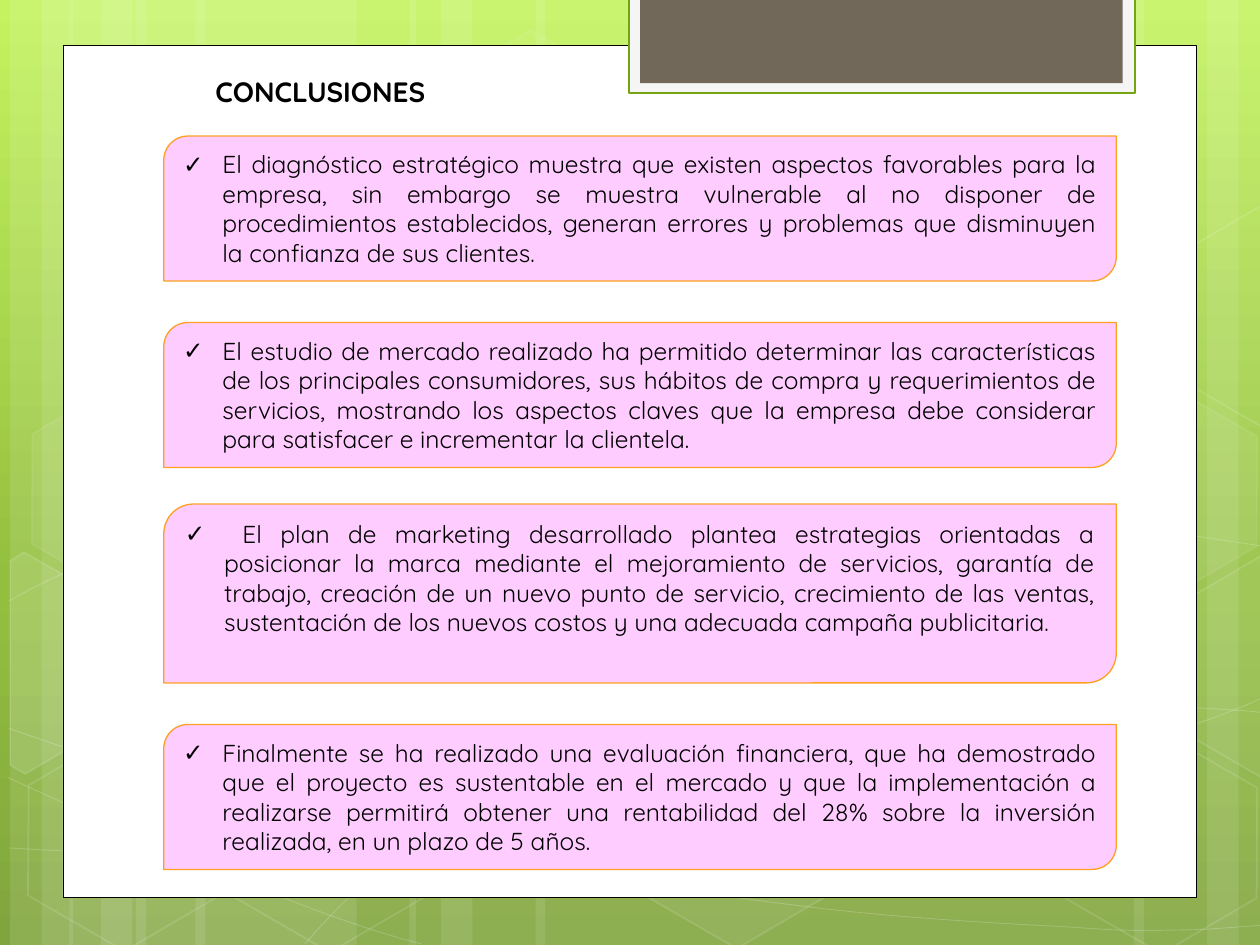
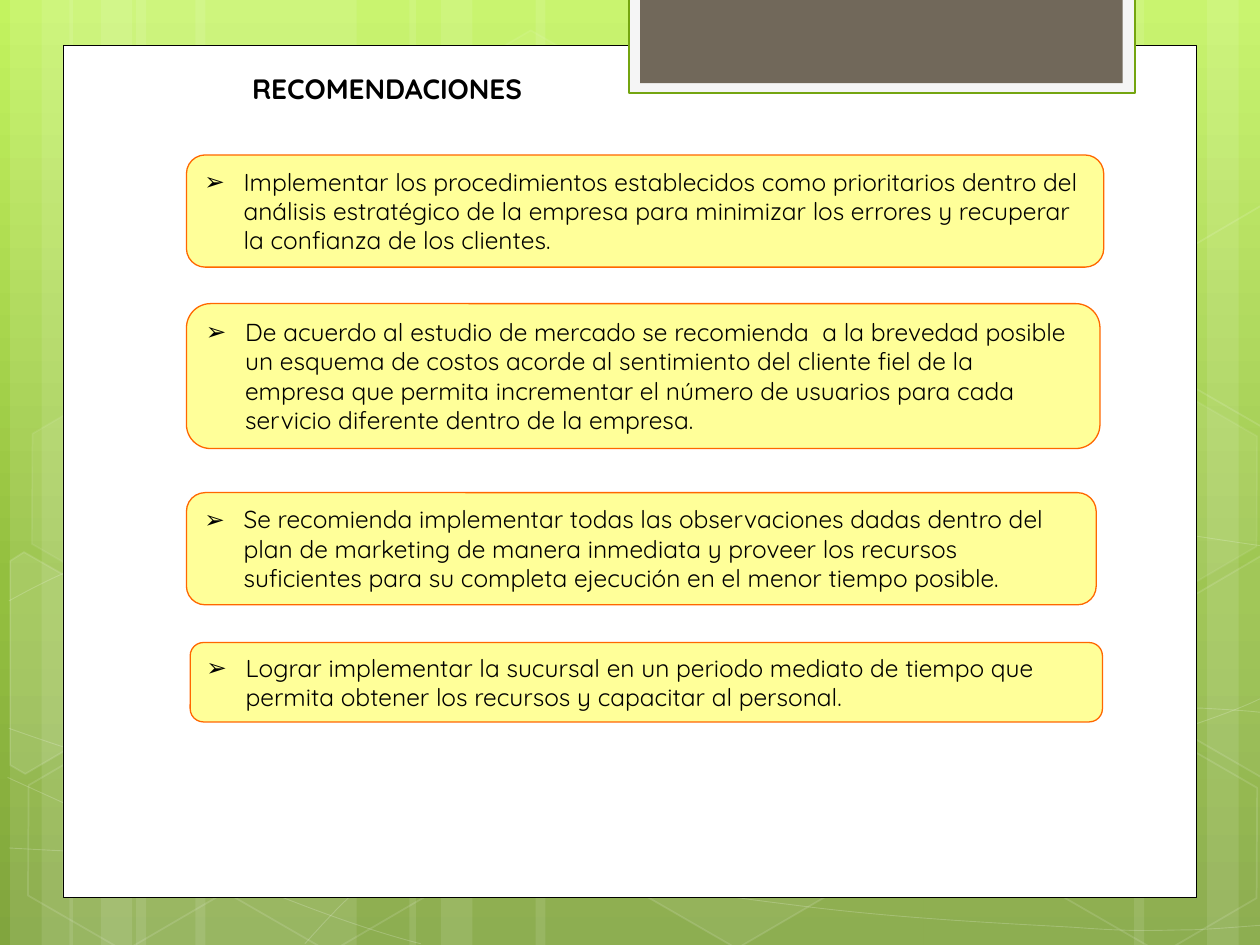
from dataclasses import dataclass
from itertools import count
from math import cos, radians, sin

from lxml.etree import SubElement
from pptx import Presentation
from pptx.dml.color import RGBColor
from pptx.enum.shapes import MSO_SHAPE
from pptx.enum.text import MSO_ANCHOR, MSO_AUTO_SIZE, PP_ALIGN
from pptx.oxml.ns import qn
from pptx.util import Cm, Pt


@dataclass(frozen=True)
class Theme:
    font: str = "Quicksand"
    head: int = 16
    body: int = 14
    ink: str = "000000"
    white: str = "FFFFFF"
    back: tuple = ((0, "C3F35F"), (62, "93BF3F"), (100, "81A53E"))
    tab: str = "F5F5F5"
    edge: str = "74A510"
    stone: str = "71685A"
    pink: str = "FFCCFF"
    gold: str = "FEA022"
    cream: str = "FFFF99"
    orange: str = "FF6700"


THEME = Theme()
TILT = 30

# All places below are in inches: left, top, width, height.
SLIDES = [
    {
        "title": "CONCLUSIONES",
        "at": (1.61, 0.54, 1.99, 0.37),
        "style": {
            "kind": MSO_SHAPE.ROUND_2_DIAG_RECTANGLE,
            "fill": THEME.pink,
            "line": THEME.gold,
        },
        "format": {"bullet": "✓", "align": PP_ALIGN.JUSTIFY},
        "boxes": [
            ((1.3, 1.08, 7.56, 1.15),
             "El diagnóstico estratégico muestra que existen aspectos favorables "
             "para la empresa, sin embargo se muestra vulnerable al no disponer de "
             "procedimientos establecidos, generan errores y problemas que "
             "disminuyen la confianza de sus clientes."),
            ((1.3, 2.56, 7.56, 1.15),
             "El estudio de mercado realizado ha permitido determinar las "
             "características de los principales consumidores, sus hábitos de "
             "compra y requerimientos de servicios, mostrando los aspectos claves "
             "que la empresa debe considerar para satisfacer e incrementar la "
             "clientela."),
            ((1.3, 4, 7.56, 1.42),
             " El plan de marketing desarrollado plantea estrategias orientadas a "
             "posicionar la marca mediante el mejoramiento de servicios, garantía "
             "de trabajo, creación de un nuevo punto de servicio, crecimiento de "
             "las ventas, sustentación de los nuevos costos y una adecuada campaña "
             "publicitaria."),
            ((1.3, 5.75, 7.56, 1.15),
             "Finalmente se ha realizado una evaluación financiera, que ha "
             "demostrado que el proyecto es sustentable en el mercado y que la "
             "implementación a realizarse permitirá obtener una rentabilidad del "
             "28% sobre la inversión realizada, en un plazo de 5 años."),
        ],
    },
    {
        "title": "RECOMENDACIONES",
        "at": (1.9, 0.52, 2.79, 0.37),
        "style": {
            "kind": MSO_SHAPE.ROUNDED_RECTANGLE,
            "fill": THEME.cream,
            "line": THEME.orange,
        },
        "format": {"bullet": "➢"},
        "boxes": [
            ((1.48, 1.23, 7.28, 0.89),
             "Implementar los procedimientos establecidos como prioritarios dentro "
             "del análisis estratégico de la empresa para minimizar los errores y "
             "recuperar la confianza de los clientes."),
            ((1.48, 2.41, 7.25, 1.15),
             "De acuerdo al estudio de mercado se recomienda  a la brevedad posible "
             "un esquema de costos acorde al sentimiento del cliente fiel de la "
             "empresa que permita incrementar el número de usuarios para cada "
             "servicio diferente dentro de la empresa."),
            ((1.48, 3.91, 7.22, 0.89),
             "Se recomienda implementar todas las observaciones dadas dentro del "
             "plan de marketing de manera inmediata y proveer los recursos "
             "suficientes para su completa ejecución en el menor tiempo posible."),
            ((1.51, 5.1, 7.24, 0.63),
             "Lograr implementar la sucursal en un periodo mediato de tiempo que "
             "permita obtener los recursos y capacitar al personal."),
        ],
    },
]

# Each set of stripes: outer edge, width of the widest stripe, direction.
STRIPES = [(0.08, 1.75, 1), (0.55, 1.75, 1), (10.08, 1.75, -1), (3.25, 3.08, 1)]

# Each wave: its frame, a start point, then straight pieces (an end)
# or Bézier pieces (two handles and an end).
WAVES = [
    [(0.07, 5.51, 10, 1.29), (0.07, 6.73), (0.61, 6.76, 1.15, 6.79, 1.9, 6.78),
     (2.65, 6.77, 3.58, 6.75, 4.58, 6.65), (5.58, 6.55, 7, 6.36, 7.92, 6.17),
     (8.83, 5.98, 9.77, 5.68, 10.07, 5.51)],
    [(0.07, 3.79, 10, 0.97), (0.07, 4.77), (0.36, 4.61, 0.65, 4.46, 1.21, 4.31),
     (1.78, 4.16, 2.59, 3.94, 3.47, 3.87), (4.36, 3.8, 5.44, 3.79, 6.54, 3.87),
     (7.64, 3.95, 9.47, 4.26, 10.07, 4.34)],
    [(0.06, 6.17, 3.29, 1.32), (0.06, 6.17), (1.27, 6.72, 2.47, 7.27, 3.34, 7.49)],
    [(0.07, 5.78, 10, 1.62), (0.07, 5.78), (0.38, 5.89, 0.7, 6, 1.28, 6.16),
     (1.86, 6.31, 2.73, 6.56, 3.57, 6.73), (4.4, 6.9, 5.45, 7.08, 6.28, 7.18),
     (7.11, 7.29, 8, 7.33, 8.53, 7.36), (9.05, 7.4, 9.19, 7.38, 9.45, 7.38),
     (9.71, 7.37, 9.89, 7.35, 10.07, 7.34)],
    [(2.42, 5.61, 7.64, 1.88), (2.42, 7.49), (2.6, 7.29, 2.78, 7.09, 3.02, 6.91),
     (3.26, 6.73, 3.6, 6.53, 3.88, 6.39), (4.16, 6.25, 4.33, 6.19, 4.7, 6.09),
     (5.06, 5.99, 5.73, 5.85, 6.08, 5.78), (6.44, 5.71, 6.49, 5.71, 6.8, 5.69),
     (7.11, 5.66, 7.6, 5.63, 7.94, 5.62), (8.29, 5.61, 8.86, 5.62, 8.86, 5.62),
     (9.53, 5.62), (9.71, 5.63, 9.88, 5.64, 9.97, 5.65),
     (10.06, 5.66, 10.03, 5.65, 10.06, 5.66)],
]

# Left, top, fill opacity (0 for no fill), line opacity.
HEXES = [
    (3.34, 0.36, 4, 8), (4.97, 5.89, 6, 12), (0.11, 5.91, 0, 12),
    (0.14, 3.12, 7, 8), (1.74, 5.92, 0, 12), (7.53, 4.53, 10, 12),
    (8.34, 5.93, 0, 12), (8.34, 3.14, 7, 8),
]

# Hexagons cut by the slide edge: fill opacity, centre, corners as seen.
CUTS = [
    (10, (0.36, 5.35), [(0.08, 4.45), (0.19, 4.38), (0.96, 4.82), (0.95, 5.7),
                        (0.2, 6.14), (0.08, 6.07)]),
    (4, (9.85, 5.2), [(9.26, 4.85), (10.01, 4.41), (10.09, 4.46),
                      (10.09, 6.13), (10.02, 6.17), (9.26, 5.73)]),
    (0, (9.85, 2.41), [(9.26, 2.07), (10.01, 1.63), (10.1, 1.68),
                       (10.09, 3.35), (10.02, 3.39), (9.26, 2.95)]),
]


def span(*sizes):
    """Turn inches into slide lengths."""
    return [Cm(size * 2.54) for size in sizes]


def tint(fill, colour, root, route, alpha):
    """Fill with a colour; alpha is the opacity in percent."""
    if not (colour and alpha):
        fill.background()
        return
    fill.solid()
    fill.fore_color.rgb = RGBColor.from_string(colour)
    if alpha < 100:
        node = root.find("/".join(qn(tag) for tag in route))
        SubElement(node, qn("a:alpha"), val=str(alpha * 1000))


def paint(shape, fill=None, line=None, width=0.75, see=100, glow=100):
    """Set fill and line; see and glow are their opacities."""
    root = shape.element.spPr
    shape.shadow.inherit = False
    tint(shape.fill, fill, root, ("a:solidFill", "a:srgbClr"), see)
    tint(shape.line.fill, line, root, ("a:ln", "a:solidFill", "a:srgbClr"), glow)
    if line:
        shape.line.width = Pt(width)
    return shape


def block(slide, at, kind=MSO_SHAPE.RECTANGLE, **look):
    return paint(slide.shapes.add_shape(kind, *span(*at)), **look)


def trace(slide, points, close=False, **look):
    """Draw an outline through the points."""
    start, *rest = [span(*point) for point in points]
    pen = slide.shapes.build_freeform(*start, scale=1.0)
    pen.add_line_segments(rest, close=close)
    return paint(pen.convert_to_shape(), **look)


def curve(slide, frame, start, *parts, **look):
    """Draw an open outline of straight and Bézier pieces in a frame."""
    left, top, width, height = frame
    shape = trace(slide, [(left, top), (left + width, top + height)], **look)
    track = shape.element.find(".//" + qn("a:path"))
    for step in list(track):
        track.remove(step)
    tags = {2: "a:lnTo", 6: "a:cubicBezTo"}
    moves = [("a:moveTo", start)] + [(tags[len(part)], part) for part in parts]
    for tag, part in moves:
        step = SubElement(track, qn(tag))
        for x, y in zip(span(*part[::2]), span(*part[1::2])):
            SubElement(step, qn("a:pt"), x=str(x - shape.left), y=str(y - shape.top))


def unturn(points, centre):
    """Turn points back by the tilt about a centre."""
    c, s = cos(radians(TILT)), sin(radians(TILT))
    u, v = centre
    return [(u + (x - u) * c + (y - v) * s, v + (y - v) * c - (x - u) * s)
            for x, y in points]


def write(shape, text, size=THEME.body, bold=False, align=PP_ALIGN.LEFT,
          bullet=None, wrap=True):
    frame = shape.text_frame
    frame.word_wrap = wrap
    frame.auto_size = MSO_AUTO_SIZE.NONE
    frame.vertical_anchor = MSO_ANCHOR.TOP
    para = frame.paragraphs[0]
    para.alignment = align
    run = para.add_run()
    run.text = text
    run.font.name, run.font.size, run.font.bold = THEME.font, Pt(size), bold
    run.font.color.rgb = RGBColor.from_string(THEME.ink)
    if bullet:
        props = para._p.get_or_add_pPr()
        indent = Cm(0.79)
        props.set("marL", str(indent))
        props.set("indent", str(-indent))
        SubElement(props, qn("a:buFont"), typeface=THEME.font)
        SubElement(props, qn("a:buChar"), char=bullet)


def shade(layout):
    """Give the layout its green gradient, top to bottom."""
    fill = layout.background.fill
    fill.gradient()
    fill.gradient_angle = 270
    stops = layout.element.find(".//" + qn("a:gsLst"))
    for stop in list(stops):
        stops.remove(stop)
    for place, colour in THEME.back:
        stop = SubElement(stops, qn("a:gs"), pos=str(place * 1000))
        SubElement(stop, qn("a:srgbClr"), val=colour)


def adorn(slide):
    """Draw the stripes, waves, hexagons, sheet and tab."""
    white = THEME.white
    for edge, wide, way in STRIPES:
        for shift, width in ((1, wide), (0, 0.5), (0.25, 0.83)):
            left = edge + shift if way > 0 else edge - shift - width
            stripe = block(slide, (left, 0, width, 7.5), fill=white, see=10)
            stripe.rotation = 0 if way > 0 else 180
    for wave in WAVES:
        curve(slide, *wave, line=white, width=0.5, glow=20)
    for left, top, see, glow in HEXES:
        hexagon = block(slide, (left, top, 1.75, 1.52), MSO_SHAPE.HEXAGON,
                        fill=white, see=see, line=white, width=1, glow=glow)
        hexagon.adjustments[0] = 0.285
        hexagon.rotation = TILT
    for see, centre, points in CUTS:
        cut = trace(slide, unturn(points, centre), close=True, fill=white,
                    see=see, line=white, width=1, glow=12)
        cut.rotation = TILT
    block(slide, (0.5, 0.36, 9, 6.76), fill=white, line=THEME.ink, width=0.5)
    block(slide, (4.99, -0.02, 4.02, 0.76), fill=THEME.tab, line=THEME.edge,
          width=1.25)
    block(slide, (5.08, -0.02, 3.83, 0.68), fill=THEME.stone)


def share(slide, layout):
    """Move the drawn backdrop into the layout, behind its placeholders."""
    tree = layout.shapes.element
    drawn = [shape for shape in slide.shapes if not shape.is_placeholder]
    for spot, number, shape in zip(count(2), count(100), drawn):
        shape.element.nvSpPr.cNvPr.set("id", str(number))
        tree.insert(spot, shape.element)


def fill_in(slide, data):
    title = slide.shapes.title
    title.left, title.top, title.width, title.height = span(*data["at"])
    write(title, data["title"], size=THEME.head, bold=True, wrap=False)
    for at, text in data["boxes"]:
        write(block(slide, at, **data["style"]), text, **data["format"])


def main():
    deck = Presentation()
    deck.slide_width, deck.slide_height = span(10, 7.5)
    layout = deck.slide_layouts[5]
    shade(layout)
    slides = [deck.slides.add_slide(layout) for _ in SLIDES]
    adorn(slides[0])
    share(slides[0], layout)
    for slide, data in zip(slides, SLIDES):
        fill_in(slide, data)
    deck.save("out.pptx")


if __name__ == "__main__":
    main()
